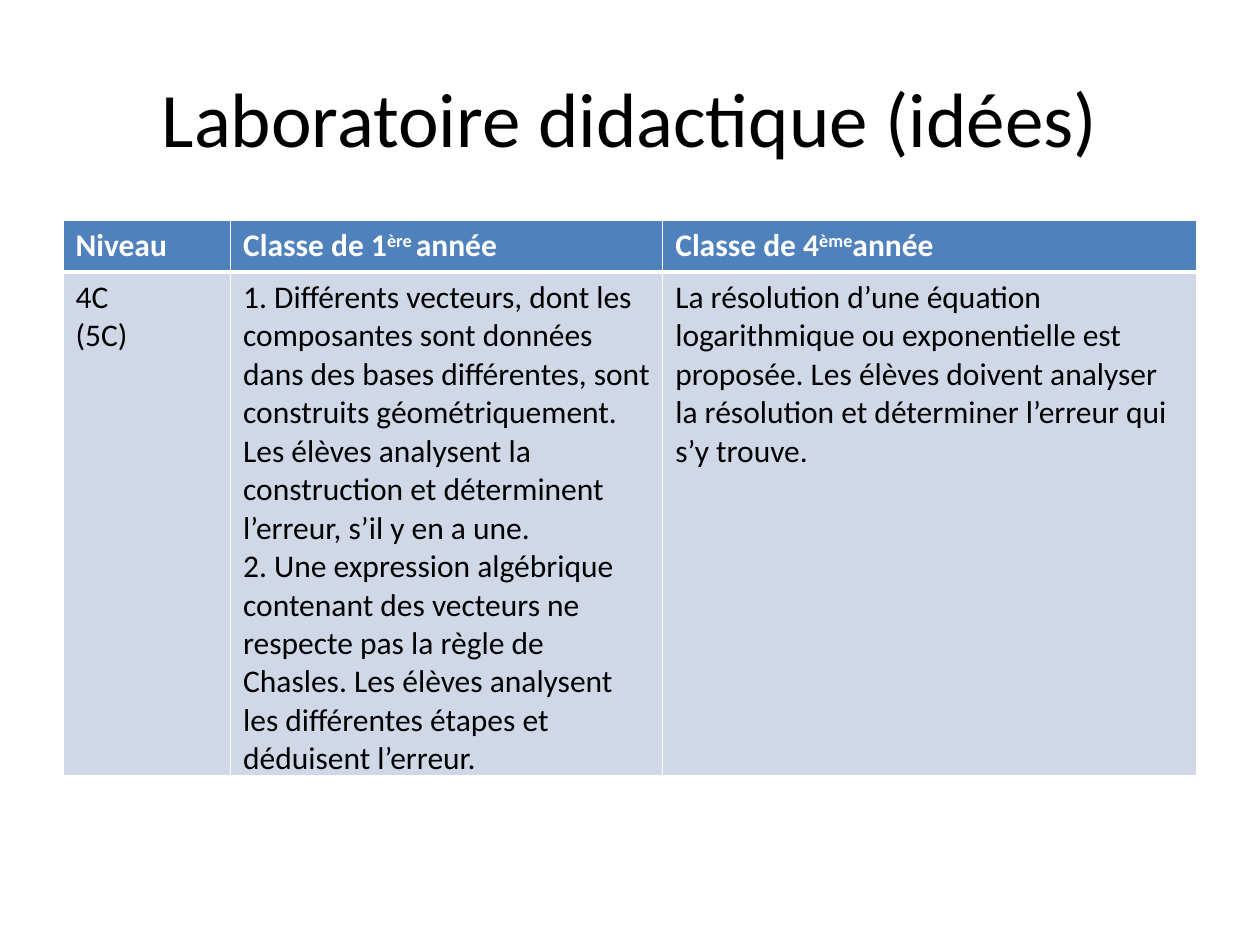
from lxml.etree import SubElement as Sub
from pptx import Presentation
from pptx.dml.color import RGBColor
from pptx.enum.text import MSO_ANCHOR as Anchor, PP_ALIGN as Align
from pptx.oxml.ns import qn
from pptx.util import Inches, Pt

BLACK = RGBColor(0, 0, 0)
WHITE = RGBColor(255, 255, 255)
BLUE = RGBColor(0x4F, 0x81, 0xBD)
PALE = RGBColor(0xD0, 0xD8, 0xE8)

# Each cell is a list of paragraphs, each paragraph a list of (text, raised) runs
HEAD = [
    [[("Niveau", False)]],
    [[("Classe de 1", False), ("ère ", True), ("année", False)]],
    [[("Classe de 4", False), ("ème", True), ("année", False)]],
]
BODY = [
    [[("4C", False)], [("(5C)", False)]],
    [
        [("1. Différents vecteurs, dont les composantes sont données dans des "
          "bases différentes, sont construits géométriquement. Les élèves "
          "analysent la construction et déterminent l’erreur, s’il y en a une.",
          False)],
        [("2. Une expression algébrique contenant des vecteurs ne respecte pas "
          "la règle de Chasles. Les élèves analysent les différentes étapes et "
          "déduisent l’erreur.", False)],
    ],
    [[("La résolution d’une équation logarithmique ou exponentielle est "
       "proposée. Les élèves doivent analyser la résolution et déterminer "
       "l’erreur qui s’y trouve.", False)]],
]


class Deck:
    font = "Calibri"

    def __init__(self, slide):
        self.slide = slide

    def text(self, frame, paras, size, color, bold=False, align=Align.LEFT):
        for i, runs in enumerate(paras):
            para = frame.paragraphs[0] if i == 0 else frame.add_paragraph()
            para.alignment = align
            for words, raised in runs:
                run = para.add_run()
                run.text = words
                font = run.font
                font.name, font.size, font.bold = self.font, Pt(size), bold
                font.color.rgb = color
                if raised:
                    run._r.get_or_add_rPr().set("baseline", "30000")

    def title(self, words, left, top, width, height):
        box = self.slide.shapes.add_textbox(
            Inches(left), Inches(top), Inches(width), Inches(height))
        frame = box.text_frame
        frame.word_wrap = True
        frame.vertical_anchor = Anchor.MIDDLE
        self.text(frame, [[(words, False)]], 44, BLACK, align=Align.CENTER)

    def border(self, cell, top, bottom):
        props = cell._tc.get_or_add_tcPr()
        for side, width in (("L", 1), ("R", 1), ("T", top), ("B", bottom)):
            line = Sub(props, qn(f"a:ln{side}"), w=str(Pt(width)))
            fill = Sub(line, qn("a:solidFill"))
            Sub(fill, qn("a:srgbClr"), val=str(WHITE))

    def row(self, cells, texts, fill, color, bold, top, bottom):
        for cell, paras in zip(cells, texts):
            self.border(cell, top, bottom)
            cell.fill.solid()
            cell.fill.fore_color.rgb = fill
            self.text(cell.text_frame, paras, 18, color, bold)

    def table(self, left, top, height, widths, low):
        shape = self.slide.shapes.add_table(
            2, len(widths), Inches(left), Inches(top),
            Inches(sum(widths)), Inches(height))
        table = shape.table
        for col, width in zip(table.columns, widths):
            col.width = Inches(width)
        # Rows start low and grow with their text
        for row in table.rows:
            row.height = Inches(low)
        shape.height = Inches(height)
        head, body = table.rows
        self.row(head.cells, HEAD, BLUE, WHITE, True, 1, 3)
        self.row(body.cells, BODY, PALE, BLACK, False, 3, 1)


def main():
    prs = Presentation()
    prs.slide_width, prs.slide_height = Inches(10), Inches(7.5)
    deck = Deck(prs.slides.add_slide(prs.slide_layouts[6]))

    # Title
    deck.title("Laboratoire didactique (idées)", 0.5, 0.3, 9, 1.25)

    # Ideas by class level
    deck.table(0.5, 1.75, 4.71, (1.33, 3.43, 4.24), 0.41)

    prs.save("out.pptx")


if __name__ == "__main__":
    main()
